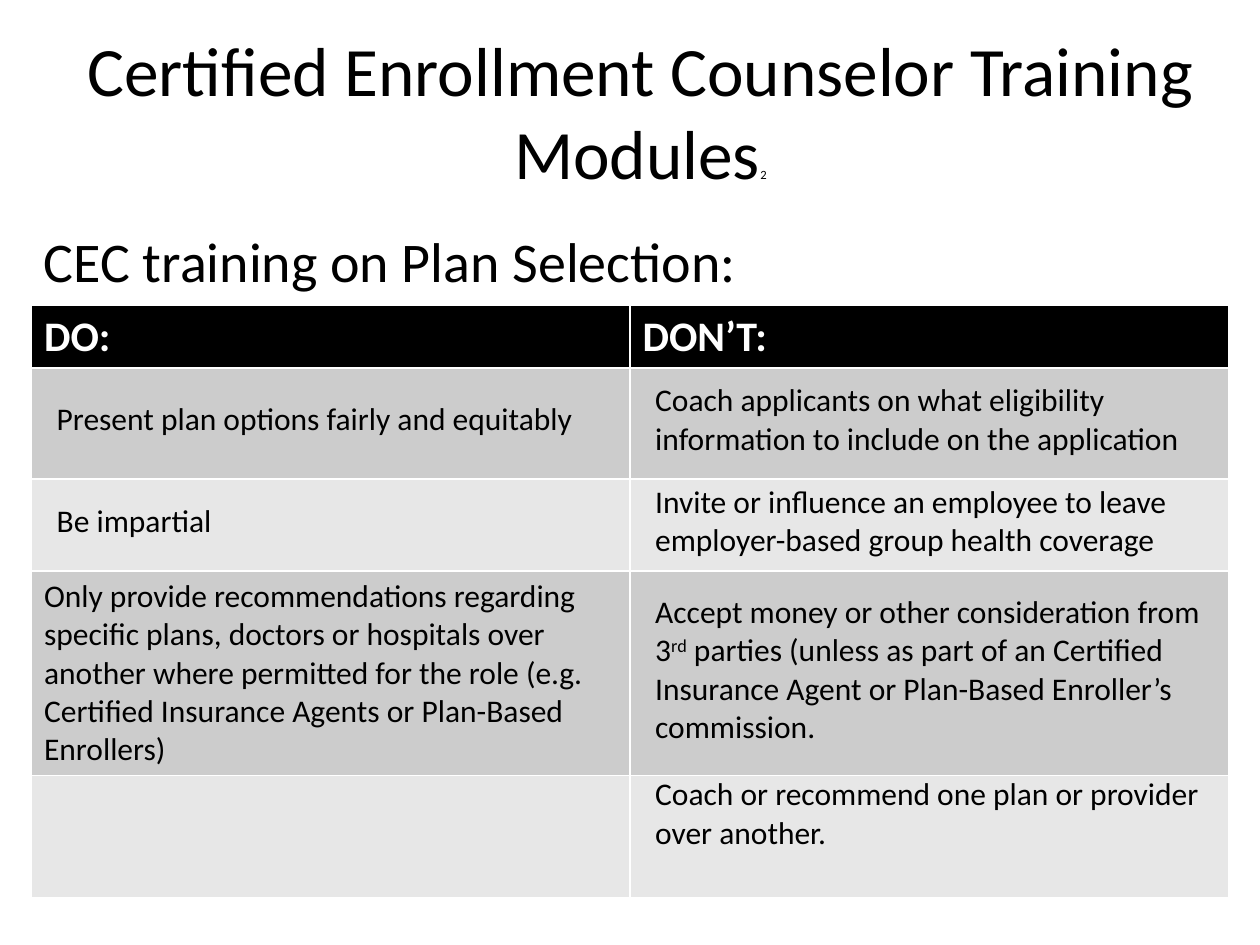
from pptx import Presentation
from pptx.dml.color import RGBColor
from pptx.enum.text import MSO_ANCHOR, PP_ALIGN
from pptx.util import Pt

BLACK = RGBColor(0x00, 0x00, 0x00)
WHITE = RGBColor(0xFF, 0xFF, 0xFF)
BANDS = (RGBColor(0xCC, 0xCC, 0xCC), RGBColor(0xE7, 0xE7, 0xE7))
TOP, MIDDLE = MSO_ANCHOR.TOP, MSO_ANCHOR.MIDDLE
CENTER, LEFT = PP_ALIGN.CENTER, PP_ALIGN.LEFT
FONT = "Calibri"
WIDE = (14.4, 0, 14.4, 3.6)     # cell margins: left, top, right, bottom
NORMAL = (7.2, 3.6, 7.2, 3.6)

# Content: runs are (text, size) or (text, size, baseline in 1/1000 %)
TITLE = [("Certified Enrollment Counselor Training Modules", 39.6), ("2", 7.2)]
SUBTITLE = [("CEC training on Plan Selection:", 32)]
HEADER = ("DO:", "DON’T:")
# Each row: height, then (runs, margins, anchor) for both cells
ROWS = [
    (63.4,
     ([("Present plan options fairly and equitably", 18)], WIDE, MIDDLE),
     ([("Coach applicants on what eligibility information to include on the "
        "application", 18)], WIDE, MIDDLE)),
    (52.6,
     ([("Be impartial", 18)], WIDE, MIDDLE),
     ([("Invite or influence an employee to leave employer-based group health "
        "coverage", 18)], WIDE, MIDDLE)),
    (117,
     ([("Only provide recommendations regarding specific plans, doctors or "
        "hospitals over another where permitted for the role (e.g. Certified "
        "Insurance Agents or Plan-Based Enrollers)", 18)], NORMAL, TOP),
     ([("Accept money or other consideration from 3", 18), ("rd", 18, 30000),
       (" parties (unless as part of an Certified Insurance Agent or "
        "Plan-Based Enroller’s commission.", 18)], WIDE, MIDDLE)),
    (69.8,
     ([], NORMAL, TOP),
     ([("Coach or recommend one plan or provider over another.", 18)],
      WIDE, TOP)),
]
HEADER_H = 36
TABLE_X, TABLE_Y, COL_W = 18, 174.2, 342


def add_runs(p, runs, color=BLACK, bold=False):
    for text, size, *baseline in runs:
        r = p.add_run()
        r.text = text
        r.font.name, r.font.size = FONT, Pt(size)
        r.font.bold, r.font.color.rgb = bold, color
        if baseline:
            r.font._element.set("baseline", str(baseline[0]))


def add_text(s, box, runs, anchor, align, before=0):
    tf = s.shapes.add_textbox(*(Pt(v) for v in box)).text_frame
    tf.word_wrap, tf.vertical_anchor = True, anchor
    p = tf.paragraphs[0]
    p.alignment, p.space_before = align, Pt(before)
    add_runs(p, runs)


def fill_cell(cell, fill, runs, margins, anchor, color=BLACK, bold=False):
    cell.fill.solid()
    cell.fill.fore_color.rgb = fill
    (cell.margin_left, cell.margin_top,
     cell.margin_right, cell.margin_bottom) = (Pt(m) for m in margins)
    cell.vertical_anchor = anchor
    add_runs(cell.text_frame.paragraphs[0], runs, color, bold)


prs = Presentation()
prs.slide_width, prs.slide_height = Pt(720), Pt(540)
s = prs.slides.add_slide(prs.slide_layouts[6])

# Title and subtitle
add_text(s, (42, 18, 648, 90), TITLE, MIDDLE, CENTER)
add_text(s, (18, 126, 648, 46), SUBTITLE, TOP, LEFT, before=2)

# Table: the default style supplies the white rules
heights = [HEADER_H] + [row[0] for row in ROWS]
table = s.shapes.add_table(len(heights), len(HEADER), Pt(TABLE_X), Pt(TABLE_Y),
                           Pt(COL_W * len(HEADER)), Pt(sum(heights))).table
for col in table.columns:
    col.width = Pt(COL_W)
for row, height in zip(table.rows, heights):
    row.height = Pt(height)
for j, text in enumerate(HEADER):
    fill_cell(table.cell(0, j), BLACK, [(text, 24)], NORMAL, TOP, WHITE, True)
for i, (_, *cells) in enumerate(ROWS):
    for j, content in enumerate(cells):
        fill_cell(table.cell(i + 1, j), BANDS[i % 2], *content)

prs.save("out.pptx")
